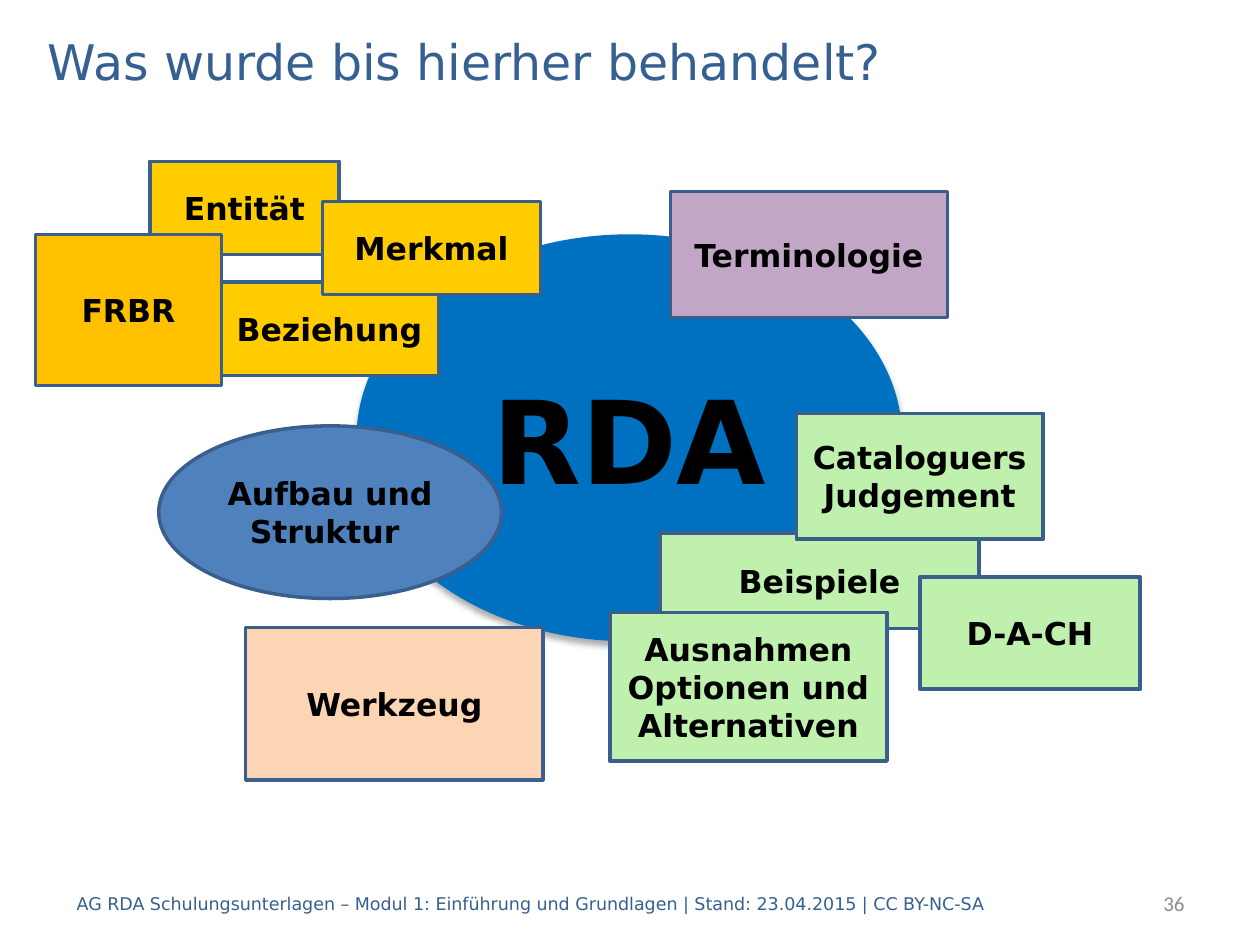
import pptx
import pptx.util
import pptx.dml.color
import pptx.enum.shapes
import pptx.enum.text
import lxml.etree

COLORS = {
    "title": "376092", "number": "8C8C8C", "text": "000000", "border": "3A5F8C",
    "core": "0070C0", "purple": "C1A7C5", "blue": "4F81BD", "yellow": "FFCC00",
    "amber": "FFC000", "peach": "FCD5B5", "green": "BFF0AE",
}
WIDTH, HEIGHT = pptx.util.Inches(10), pptx.util.Inches(7.5)
FONT = "DejaVu Sans"
SHAPE = pptx.enum.shapes.MSO_SHAPE
ALIGN = pptx.enum.text.PP_ALIGN

TITLE = ("Was wurde bis hierher behandelt?", (2.8, 2.67, 94.5, 7.47))
FOOTERS = [
    ("36", (79.1, 92.93, 15.9, 5.33), ALIGN.RIGHT,
     {"size": 12, "name": "Calibri", "color": "number"}),
    ("AG RDA Schulungsunterlagen – Modul 1: Einführung und Grundlagen | "
     "Stand: 23.04.2015 | CC BY-NC-SA", (5.1, 92.93, 79.5, 5.33), ALIGN.LEFT,
     {"size": 10, "name": FONT, "color": "title"}),
]
CORE = ("RDA", SHAPE.OVAL, "core", (28.3, 24.8, 43.3, 43.07))
TOPICS = [
    ("Terminologie", SHAPE.RECTANGLE, "purple", (53.2, 20.27, 22, 13.33)),
    ("Aufbau und Struktur ", SHAPE.OVAL, "blue", (12.6, 45.07, 27.2, 18.27)),
    ("Entität", SHAPE.RECTANGLE, "yellow", (11.9, 17.07, 15, 9.87)),
    ("Beziehung", SHAPE.RECTANGLE, "yellow", (17.5, 29.87, 17.3, 9.87)),
    ("Merkmal", SHAPE.RECTANGLE, "yellow", (25.6, 21.33, 17.3, 9.87)),
    ("Werkzeug", SHAPE.RECTANGLE, "peach", (19.5, 66.4, 23.6, 16.13)),
    ("FRBR", SHAPE.RECTANGLE, "amber", (2.8, 24.8, 14.8, 16)),
    ("Beispiele", SHAPE.RECTANGLE, "green", (52.4, 56.4, 25.3, 10.13)),
    ("D-A-CH", SHAPE.RECTANGLE, "green", (73, 61.07, 17.5, 11.87)),
    ("Ausnahmen\nOptionen und Alternativen", SHAPE.RECTANGLE, "green",
     (48.4, 64.8, 22, 15.73)),
    ("Cataloguers Judgement", SHAPE.RECTANGLE, "green", (63.2, 43.73, 19.6, 13.33)),
]


def rgb(name):
    return pptx.dml.color.RGBColor.from_string(COLORS[name])


def place(box):
    return [int(share * side / 100) for share, side in zip(box, (WIDTH, HEIGHT) * 2)]


def write(sp, text, align, size, color, **font):
    tf = sp.text_frame
    tf.text = text
    tf.word_wrap = True
    tf.auto_size = pptx.enum.text.MSO_AUTO_SIZE.NONE
    tf.vertical_anchor = pptx.enum.text.MSO_ANCHOR.MIDDLE
    for p in tf.paragraphs:
        p.alignment = align
        for r in p.runs:
            for key, value in {"size": pptx.util.Pt(size), **font}.items():
                setattr(r.font, key, value)
            r.font.color.rgb = rgb(color)


def add_topic(s, text, kind, fill, box, size=18):
    sp = s.shapes.add_shape(kind, *place(box))
    sp.shadow.inherit = False
    sp.fill.solid()
    sp.fill.fore_color.rgb = rgb(fill)
    sp.line.color.rgb = rgb("border")
    sp.line.width = pptx.util.Pt(2)
    write(sp, text, ALIGN.CENTER, size, "text", name=FONT, bold=True)
    return sp


def add_shadow(sp):
    ns = "{http://schemas.openxmlformats.org/drawingml/2006/main}"
    effects = sp.element.spPr.find(ns + "effectLst")
    shadow = lxml.etree.SubElement(
        effects, ns + "outerShdw", blurRad=str(pptx.util.Pt(3.5)),
        dist=str(pptx.util.Pt(2.2)), dir="5400000", rotWithShape="0")
    color = lxml.etree.SubElement(shadow, ns + "srgbClr", val=COLORS["text"])
    lxml.etree.SubElement(color, ns + "alpha", val="32000")


def main():
    prs = pptx.Presentation()
    prs.slide_width, prs.slide_height = WIDTH, HEIGHT
    s = prs.slides.add_slide(prs.slide_layouts[5])

    text, box = TITLE
    title = s.shapes.title
    title.left, title.top, title.width, title.height = place(box)
    write(title, text, ALIGN.LEFT, 28, "title", name=FONT)

    for text, box, align, style in FOOTERS:
        write(s.shapes.add_textbox(*place(box)), text, align, **style)

    core = add_topic(s, *CORE, size=66)
    core.line.fill.background()
    add_shadow(core)
    for topic in TOPICS:
        add_topic(s, *topic)

    prs.save("out.pptx")


if __name__ == "__main__":
    main()
